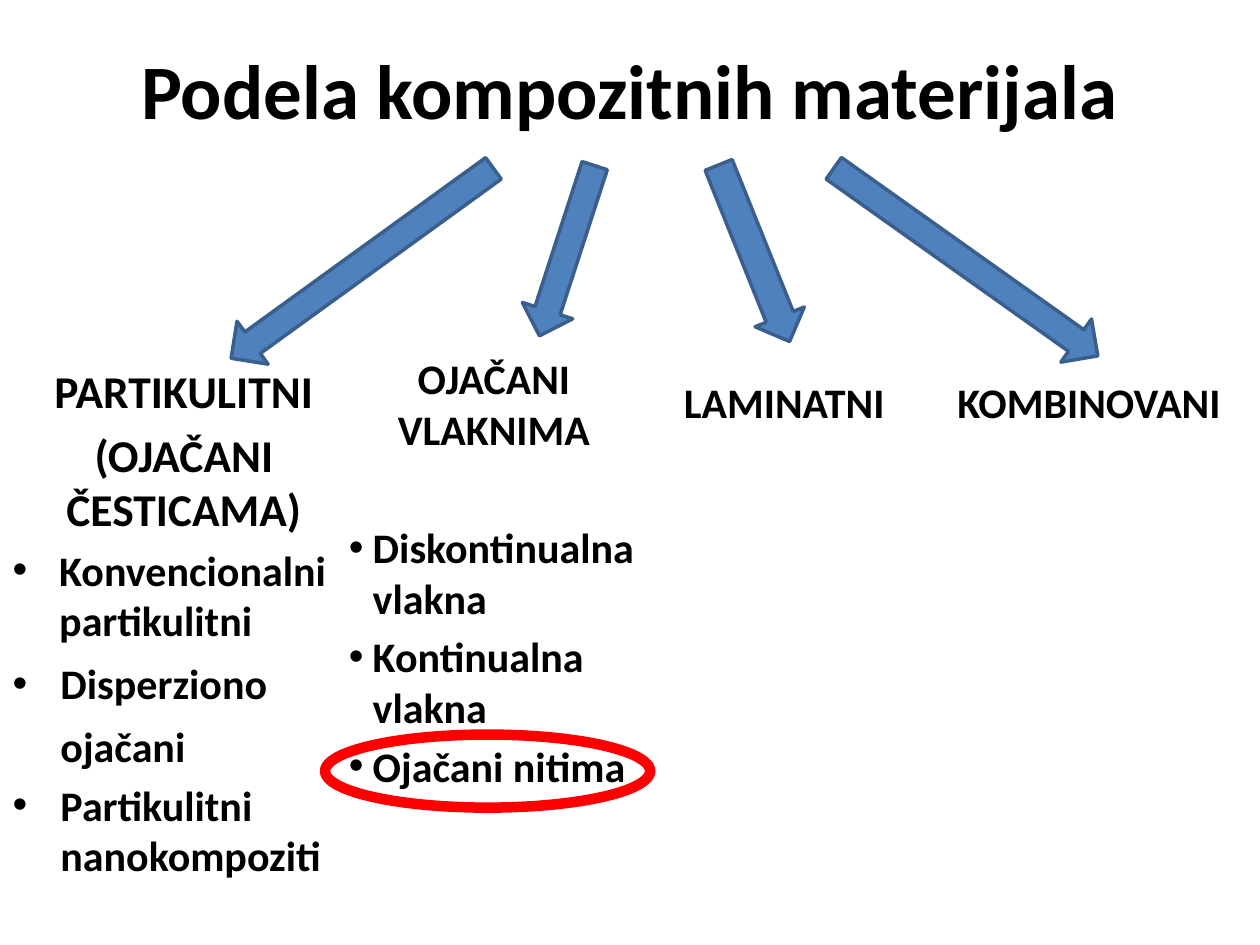
"""Build a slide that classifies composite materials into four groups."""
import dataclasses

import lxml.etree
import pptx
import pptx.dml.color
import pptx.enum.shapes
import pptx.enum.text
import pptx.oxml.ns
import pptx.util

Inches = pptx.util.Inches
Pt = pptx.util.Pt
Align = pptx.enum.text.PP_ALIGN
Shape = pptx.enum.shapes.MSO_SHAPE


@dataclasses.dataclass(frozen=True)
class Theme:
    font: str = "Calibri"
    ink: str = "000000"
    arrow: str = "4F81BD"
    arrow_edge: str = "3A5F8C"
    highlight: str = "FF0000"
    title: int = 44
    heading: int = 26
    body: int = 24


THEME = Theme()


def color(value):
    return pptx.dml.color.RGBColor.from_string(value)


def place(box, left, top, width, height):
    box.left, box.top = Inches(left), Inches(top)
    box.width, box.height = Inches(width), Inches(height)


def prepare(box, anchor=pptx.enum.text.MSO_ANCHOR.TOP, inset=0.05):
    """Set wrapping, anchor and top inset, and return the text frame."""
    frame = box.text_frame
    frame.word_wrap = True
    frame.auto_size = pptx.enum.text.MSO_AUTO_SIZE.NONE
    frame.vertical_anchor = anchor
    frame.margin_top = Inches(inset)
    return frame


def write(frame, text, size=THEME.body, align=Align.LEFT, indent=0,
          bullet=False, before=None, spacing=1.0):
    """Add one bold paragraph, using the first one while it is empty."""
    first = frame.paragraphs[0]
    para = frame.add_paragraph() if first.runs else first
    para.alignment = align
    para.line_spacing = spacing
    para.space_before = Pt(size * 0.2 if before is None else before)
    properties = para._p.get_or_add_pPr()
    properties.set("marL", str(Inches(indent)))
    properties.set("indent", str(-Inches(indent)))
    if bullet:
        font = lxml.etree.SubElement(properties, pptx.oxml.ns.qn("a:buFont"))
        font.set("typeface", "Arial")
        mark = lxml.etree.SubElement(properties, pptx.oxml.ns.qn("a:buChar"))
        mark.set("char", "•")
    else:
        lxml.etree.SubElement(properties, pptx.oxml.ns.qn("a:buNone"))
    span = para.add_run()
    span.text = text
    span.font.name = THEME.font
    span.font.size = Pt(size)
    span.font.bold = True
    span.font.color.rgb = color(THEME.ink)


def add_column(page, *bounds, inset=0.05):
    box = page.shapes.add_textbox(*map(Inches, bounds))
    return prepare(box, inset=inset)


def add_figure(page, kind, bounds, edge, weight, fill=None):
    """Add a flat preset shape, hollow unless a fill is given."""
    figure = page.shapes.add_shape(kind, *map(Inches, bounds))
    figure.shadow.inherit = False
    if fill:
        figure.fill.solid()
        figure.fill.fore_color.rgb = color(fill)
    else:
        figure.fill.background()
    figure.line.color.rgb = color(edge)
    figure.line.width = Pt(weight)
    return figure


def add_arrow(page, left, top, length, angle, shaft=0.5):
    arrow = add_figure(page, Shape.RIGHT_ARROW, (left, top, length, 0.42),
                       THEME.arrow_edge, 2, THEME.arrow)
    arrow.rotation = angle
    arrow.adjustments[0] = shaft


def fill_title(page):
    title = page.shapes.title
    place(title, 0.5, 0.08, 9, 1.25)
    frame = prepare(title, pptx.enum.text.MSO_ANCHOR.MIDDLE)
    write(frame, "Podela kompozitnih materijala", size=THEME.title,
          align=Align.CENTER, before=0)


def fill_particles(page):
    body = page.placeholders[1]
    place(body, 0, 2.83, 2.92, 4.25)
    frame = prepare(body)
    for text, indent in (("PARTIKULITNI", 0.38), ("(OJAČANI ČESTICAMA)", 0)):
        write(frame, text, size=THEME.heading, align=Align.CENTER, indent=indent)
    write(frame, "Konvencionalni partikulitni", indent=0.37, bullet=True)
    write(frame, "Disperziono ojačani", indent=0.38, bullet=True,
          before=0, spacing=1.25)
    write(frame, "Partikulitni nanokompoziti", indent=0.38, bullet=True)


def fill_fibres(page):
    frame = add_column(page, 2.67, 2.75, 2.5, 4.08)
    write(frame, "OJAČANI VLAKNIMA", align=Align.CENTER)
    write(frame, "Diskontinualna vlakna", indent=0.19, bullet=True, before=39)
    for text in ("Kontinualna vlakna", "Ojačani nitima"):
        write(frame, text, indent=0.19, bullet=True)


def main():
    deck = pptx.Presentation()
    deck.slide_width, deck.slide_height = Inches(10), Inches(7.5)
    page = deck.slides.add_slide(deck.slide_layouts[1])
    fill_title(page)
    fill_particles(page)
    fill_fibres(page)
    for text, left, width in (("LAMINATNI", 5.33, 1.92),
                              ("KOMBINOVANI", 7.5, 2.42)):
        frame = add_column(page, left, 2.83, width, 3.67, inset=0.16)
        write(frame, text, indent=0.38)
    add_arrow(page, 3.79, 1.78, 1.42, 108)
    add_arrow(page, 1.59, 1.88, 2.57, 144.1)
    add_arrow(page, 5.23, 1.8, 1.51, 68.1, shaft=0.55)
    add_arrow(page, 6.38, 1.87, 2.57, 35.4)
    add_figure(page, Shape.OVAL, (2.58, 5.83, 2.58, 0.58), THEME.highlight, 6)
    deck.save("out.pptx")


if __name__ == "__main__":
    main()
